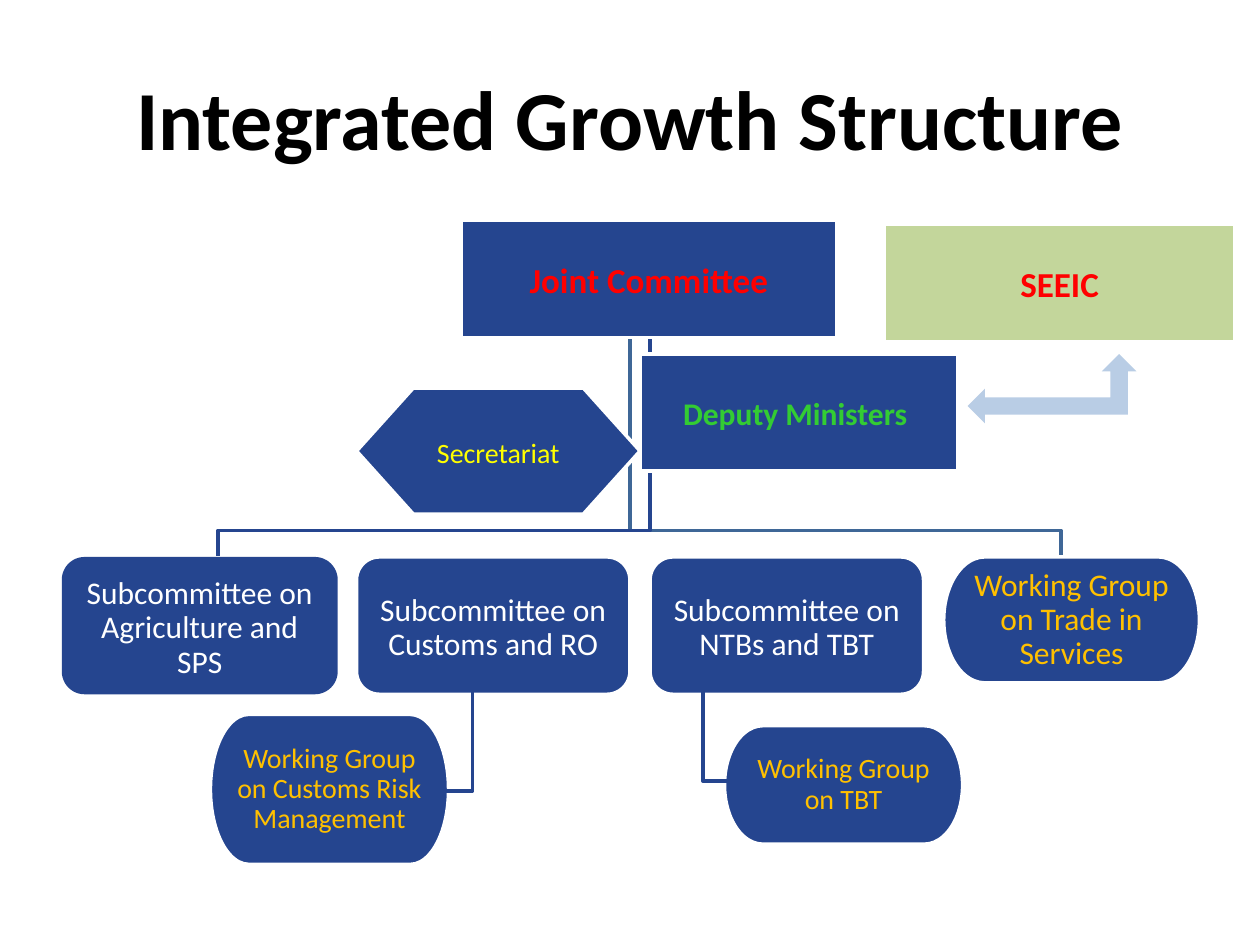
"""Build the Integrated Growth Structure organisation chart slide."""
from typing import NamedTuple

from pptx import Presentation
from pptx.dml.color import RGBColor as Rgb
from pptx.enum.shapes import MSO_SHAPE as Geo
from pptx.enum.text import MSO_ANCHOR as Anchor, PP_ALIGN as Align
from pptx.util import Inches, Pt

HUES = {
    "navy": "25458F", "steel": "3F6797", "sage": "C3D69B", "sky": "B9CDE5",
    "white": "FFFFFF", "black": "000000", "red": "FF0000",
    "green": "33CC33", "gold": "FFC000", "yellow": "FFFF00",
}
RECT, ROUND = Geo.RECTANGLE, Geo.FLOWCHART_ALTERNATE_PROCESS
PILL, HEX = Geo.FLOWCHART_TERMINATOR, Geo.FLOWCHART_PREPARATION


class Box(NamedTuple):
    geo: int
    left: float
    top: float
    width: float
    height: float
    text: str
    size: int
    ink: str
    fill: str = "navy"
    edge: bool = True
    bold: bool = False


class Link(NamedTuple):
    hue: str
    points: list


TRUNKS = [
    Link("steel", [(5, 2.68), (5, 4.21), (8.42, 4.21), (8.42, 4.41)]),
    Link("navy", [(5.16, 2.68), (5.16, 4.21), (1.73, 4.21), (1.73, 4.41)]),
]
TWIGS = [
    Link("navy", [(3.75, 5.42), (3.75, 6.28), (3.47, 6.28)]),
    Link("navy", [(5.58, 5.33), (5.58, 6.2), (5.87, 6.2)]),
]
UNITS = [
    Box(RECT, 3.66, 1.75, 2.98, 0.93, "Joint Committee", 20, "red", bold=True),
    Box(ROUND, 0.49, 4.42, 2.19, 1.09, "Subcommittee on Agriculture and SPS",
        18, "white", edge=False),
    Box(ROUND, 2.83, 4.42, 2.17, 1.09, "Subcommittee on Customs and RO", 18, "white"),
    Box(ROUND, 5.16, 4.42, 2.17, 1.09, "Subcommittee on NTBs and TBT", 18, "white"),
    Box(PILL, 5.75, 5.76, 1.89, 0.94, "Working Group on TBT", 16, "gold"),
    Box(PILL, 7.49, 4.42, 2.03, 1, "Working Group on Trade in Services", 18, "gold"),
    Box(HEX, 2.83, 3.08, 2.25, 1, "Secretariat", 16, "yellow"),
    Box(PILL, 1.67, 5.67, 1.89, 1.19, "Working Group on Customs Risk Management",
        16, "gold"),
]
PEERS = [
    Box(RECT, 5.08, 2.81, 2.52, 0.93, "Deputy Ministers ", 18, "green", bold=True),
    Box(RECT, 7.02, 1.78, 2.78, 0.93, "SEEIC", 20, "red", "sage", bold=True),
]


def tint(name: str) -> Rgb:
    """Return the named colour."""
    return Rgb.from_string(HUES[name])


def write(frame, text: str, *, size: int, ink: str, bold: bool = False,
          space: float = 1) -> None:
    """Fill a text frame with one centred paragraph."""
    frame.word_wrap = True
    frame.vertical_anchor = Anchor.MIDDLE
    para = frame.paragraphs[0]
    para.alignment = Align.CENTER
    para.line_spacing = space
    run = para.add_run()
    run.text = text
    font = run.font
    font.name, font.size, font.bold = "Calibri", Pt(size), bold
    font.color.rgb = tint(ink)


def add_form(slide, geo: int, place: tuple, fill: str):
    """Add a flat preset shape without an outline."""
    form = slide.shapes.add_shape(geo, *map(Inches, place))
    form.shadow.inherit = False
    form.fill.solid()
    form.fill.fore_color.rgb = tint(fill)
    form.line.fill.background()
    return form


def draw_box(slide, box: Box) -> None:
    """Draw one labelled unit."""
    form = add_form(slide, box.geo, box[1:5], box.fill)
    if box.edge:
        form.line.color.rgb = tint("white")
        form.line.width = Pt(2)
    frame = form.text_frame
    frame.margin_left = frame.margin_right = frame.margin_top = Inches(0.06)
    frame.margin_bottom = Inches(0.06 if box.geo == PILL else 0.01)
    write(frame, box.text, size=box.size, ink=box.ink, bold=box.bold, space=0.9)


def draw_link(slide, link: Link) -> None:
    """Draw one open elbow line."""
    start, *rest = [(Inches(x), Inches(y)) for x, y in link.points]
    pen = slide.shapes.build_freeform(*start)
    pen.add_line_segments(rest, close=False)
    form = pen.convert_to_shape()
    form.shadow.inherit = False
    form.fill.background()
    form.line.color.rgb = tint(link.hue)
    form.line.width = Pt(2)


def main() -> None:
    """Build and save the slide."""
    deck = Presentation()
    deck.slide_width, deck.slide_height = Inches(10), Inches(7.5)
    slide = deck.slides.add_slide(deck.slide_layouts[5])
    title = slide.shapes.title
    title.left, title.top = Inches(0.5), Inches(0.3)
    title.width, title.height = Inches(9), Inches(1.25)
    write(title.text_frame, "Integrated Growth Structure",
          size=48, ink="black", bold=True)
    for item in TRUNKS + UNITS + TWIGS + PEERS:
        draw = draw_link if isinstance(item, Link) else draw_box
        draw(slide, item)
    add_form(slide, Geo.LEFT_UP_ARROW, (7.68, 2.81, 1.34, 0.55), "sky")
    deck.save("out.pptx")


if __name__ == "__main__":
    main()
